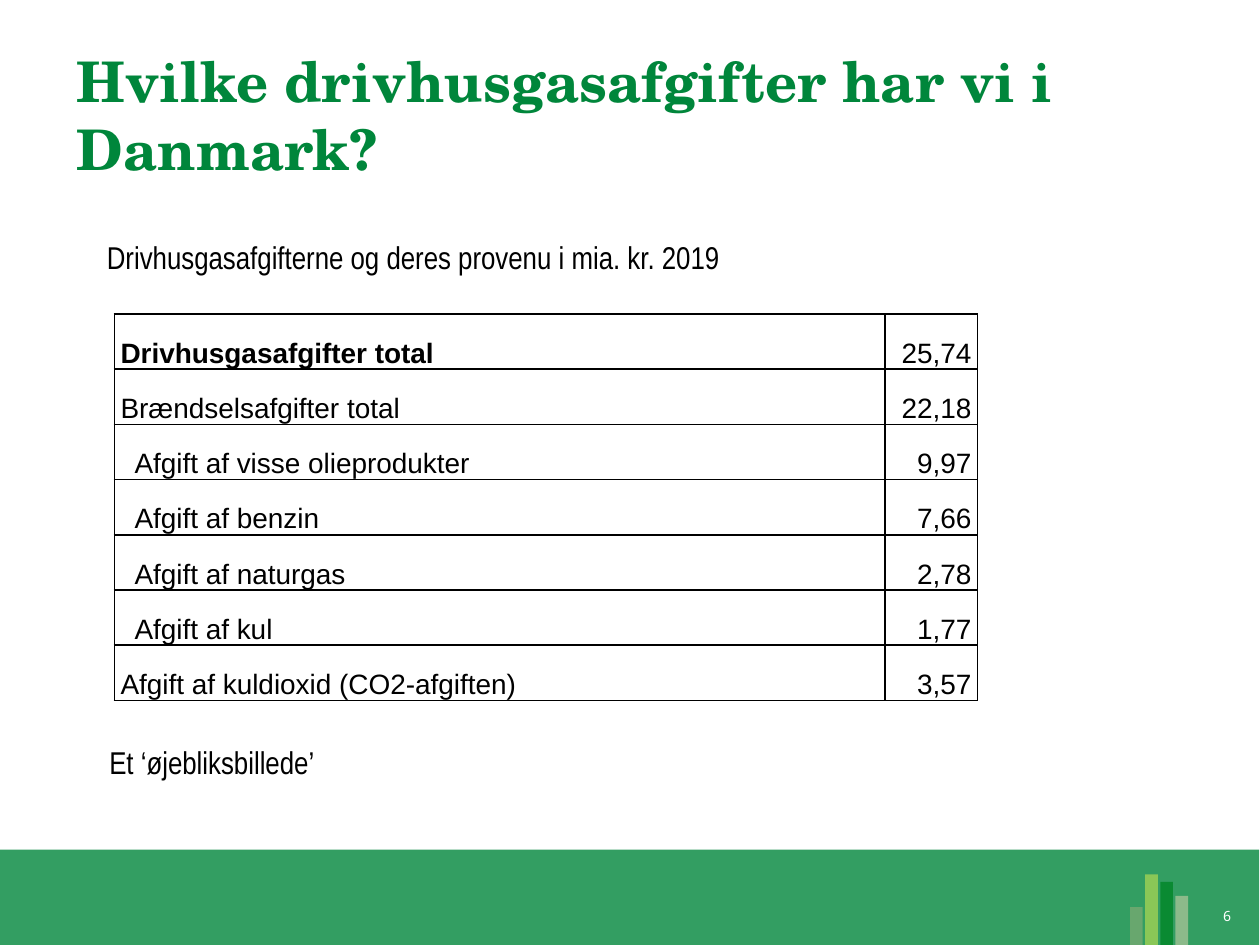
from lxml.etree import SubElement
from pptx import Presentation
from pptx.dml.color import RGBColor
from pptx.enum.shapes import MSO_SHAPE
from pptx.enum.text import MSO_ANCHOR, PP_ALIGN
from pptx.oxml.ns import qn
from pptx.util import Pt

COLORS = {
    "green": "00863B", "sage": "76AA71", "lime": "A0D255", "leaf": "008627",
    "pale": "A3C195", "black": "000000", "white": "FFFFFF",
}

deck = Presentation()
deck.slide_width, deck.slide_height = Pt(720), Pt(540)
slide = deck.slides.add_slide(deck.slide_layouts[5])


def add_block(left, top, width, height, color):
    """Add a borderless rectangle with 80 % opacity."""
    block = slide.shapes.add_shape(
        MSO_SHAPE.RECTANGLE, Pt(left), Pt(top), Pt(width), Pt(height))
    block.shadow.inherit = False
    block.line.fill.background()
    block.fill.solid()
    block.fill.fore_color.rgb = RGBColor.from_string(COLORS[color])
    srgb = block.fill._xPr.find(".//" + qn("a:srgbClr"))
    SubElement(srgb, qn("a:alpha"), val="80000")


def style_text(para, size, font, color="black", bold=False, align=PP_ALIGN.LEFT):
    para.alignment = align
    for span in para.runs:
        span.font.size = Pt(size)
        span.font.name = font
        span.font.bold = bold
        span.font.color.rgb = RGBColor.from_string(COLORS[color])


# Footer band with four bars standing on the bottom edge
add_block(-0.5, 485.5, 720, 54.5, "green")
bars = [("sage", 21.6), ("lime", 40.3), ("leaf", 36), ("pale", 28)]
for index, (color, height) in enumerate(bars):
    add_block(645.8 + 8.64 * index, 540 - height, 7.2, height, color)

# Title
title = slide.shapes.title
title.left, title.top, title.width, title.height = Pt(36.7), Pt(20.2), Pt(646.6), Pt(90)
title.text_frame.text = "Hvilke drivhusgasafgifter har vi i Danmark?"
title.text_frame.vertical_anchor = MSO_ANCHOR.MIDDLE
style_text(title.text_frame.paragraphs[0], 32, "TeX Gyre Schola", "green", bold=True)

# Slide number
number = slide.shapes.add_textbox(Pt(684.7), Pt(512.6), Pt(33), Pt(21.6))
frame = number.text_frame
frame.margin_left = frame.margin_right = frame.margin_top = frame.margin_bottom = 0
frame.word_wrap = True
frame.vertical_anchor = MSO_ANCHOR.MIDDLE
frame.text = "6"
style_text(frame.paragraphs[0], 8, "Noto Sans", "white", align=PP_ALIGN.CENTER)

# Revenue table
rows = [
    ("Drivhusgasafgifter total", "25,74", 0),
    ("Brændselsafgifter total", "22,18", 0),
    ("Afgift af visse olieprodukter", "9,97", 8),
    ("Afgift af benzin", "7,66", 8),
    ("Afgift af naturgas", "2,78", 8),
    ("Afgift af kul", "1,77", 8),
    ("Afgift af kuldioxid (CO2-afgiften)", "3,57", 0),
]
row_height = 31.57
table = slide.shapes.add_table(
    len(rows), 2, Pt(65.3), Pt(179.4), Pt(493.4), Pt(row_height * len(rows))).table
table.first_row = table.horz_banding = False
table.columns[0].width, table.columns[1].width = Pt(440.4), Pt(53)

for row_index, (label, amount, indent) in enumerate(rows):
    table.rows[row_index].height = Pt(row_height)
    for column, text in enumerate((label, amount)):
        cell = table.cell(row_index, column)
        cell.text_frame.text = text
        cell.vertical_anchor = MSO_ANCHOR.BOTTOM
        cell.margin_left = cell.margin_right = Pt(3.6)
        cell.margin_top = cell.margin_bottom = 0
        para = cell.text_frame.paragraphs[0]
        para.line_spacing = 1.1
        style_text(para, 16, "Arial", bold=row_index == 0 and column == 0,
                   align=PP_ALIGN.RIGHT if column else PP_ALIGN.LEFT)
        if indent and column == 0:
            para._p.get_or_add_pPr().set("indent", str(Pt(indent)))
        properties = cell._tc.get_or_add_tcPr()
        for side in ("lnL", "lnR", "lnT", "lnB"):
            border = SubElement(properties, qn("a:" + side), w=str(Pt(1)))
            fill = SubElement(border, qn("a:solidFill"))
            SubElement(fill, qn("a:srgbClr"), val=COLORS["black"])
        cell.fill.background()

# Caption above the table and remark below it
notes = [
    ("Drivhusgasafgifterne og deres provenu i mia. kr. 2019", 54, 130.3, 532.8, 1.1),
    ("Et ‘øjebliksbillede’", 55.4, 421.2, 476, 1),
]
for text, left, top, width, spacing in notes:
    box = slide.shapes.add_textbox(Pt(left), Pt(top), Pt(width), Pt(29))
    box.text_frame.word_wrap = True
    box.text_frame.text = text
    para = box.text_frame.paragraphs[0]
    para.line_spacing = spacing
    style_text(para, 18, "Arial Narrow")

deck.save("out.pptx")
